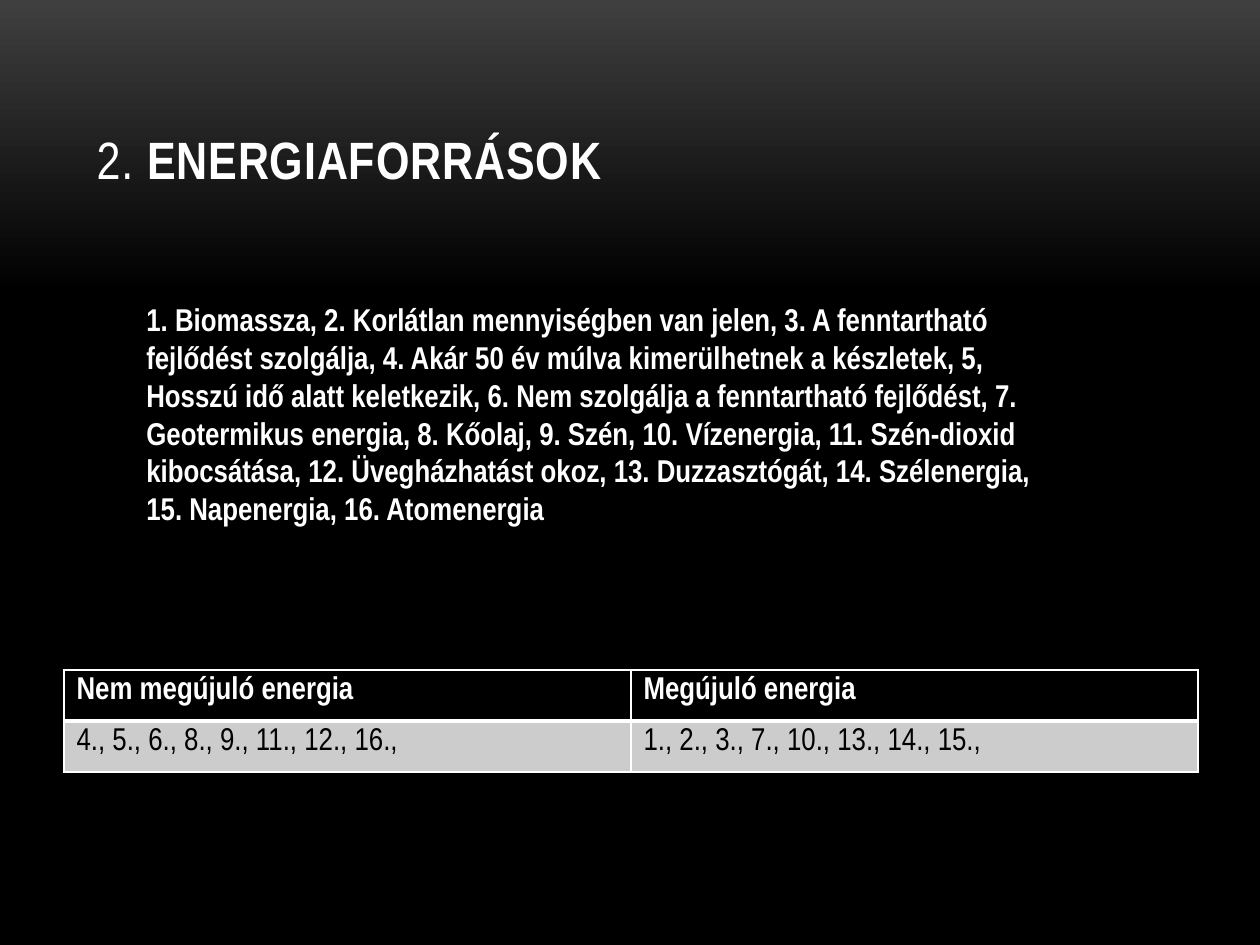
import pptx
import pptx.dml.color
import pptx.enum.text
import pptx.oxml
import pptx.oxml.ns
import pptx.util

# Content
TITLE = [("2. ", False), ("ENERGIAFORRÁSOK", True)]
TERMS = (
    "1. Biomassza, 2. Korlátlan mennyiségben van jelen, 3. A fenntartható "
    "fejlődést szolgálja, 4. Akár 50 év múlva kimerülhetnek a készletek, 5, "
    "Hosszú idő alatt keletkezik, 6. Nem szolgálja a fenntartható fejlődést, 7. "
    "Geotermikus energia, 8. Kőolaj, 9. Szén, 10. Vízenergia, 11. Szén-dioxid "
    "kibocsátása, 12. Üvegházhatást okoz, 13. Duzzasztógát, 14. Szélenergia, "
    "15. Napenergia, 16. Atomenergia"
)
ENERGY_ROWS = [
    ("Nem megújuló energia", "Megújuló energia"),
    ("4., 5., 6., 8., 9., 11., 12., 16.,", "1., 2., 3., 7., 10., 13., 14., 15.,"),
]

# Style and layout, in px
FONT = "Arial Narrow"
COLORS = {"white": "FFFFFF", "black": "000000", "glow": "3F3F3F", "answer": "CCCCCC"}
PX = 914400 / 126
SLIDE_SIZE = (1260, 945)
TITLE_BOX = (84, 38, 1092, 158)
TERMS_BOX = (134, 294, 942, 242)
TABLE_BOX = (64, 670, 1134, 102)


def emu(lengths):
    return [pptx.util.Emu(round(length * PX)) for length in lengths]


def rgb(name):
    return pptx.dml.color.RGBColor.from_string(COLORS[name])


def add_text(paragraph, text, size=18, color="white", bold=False, spacing=None):
    run = paragraph.add_run()
    run.text = text
    run.font.name = FONT
    run.font.size = pptx.util.Pt(size)
    run.font.bold = bold
    run.font.color.rgb = rgb(color)
    if spacing is not None:
        run.font._element.set("spc", str(round(spacing * 100)))


def set_borders(cell, widths):
    """Draw white edges; widths holds points for left, right, top, bottom."""
    properties = cell._tc.get_or_add_tcPr()
    for index, (edge, width) in enumerate(zip(("L", "R", "T", "B"), widths)):
        line = pptx.oxml.parse_xml(
            f'<a:ln{edge} {pptx.oxml.ns.nsdecls("a")} w="{pptx.util.Pt(width)}">'
            f'<a:solidFill><a:srgbClr val="{COLORS["white"]}"/></a:solidFill></a:ln{edge}>'
        )
        properties.insert(index, line)


def main():
    deck = pptx.Presentation()
    deck.slide_width, deck.slide_height = emu(SLIDE_SIZE)
    slide = deck.slides.add_slide(deck.slide_layouts[5])

    # Background fading from grey to black
    backdrop = slide.background.fill
    backdrop.gradient()
    backdrop.gradient_angle = 270
    for stop, (position, color) in zip(backdrop.gradient_stops, [(0, "glow"), (0.31, "black")]):
        stop.position = position
        stop.color.rgb = rgb(color)

    # Title
    title = slide.shapes.title
    title.left, title.top, title.width, title.height = emu(TITLE_BOX)
    title.text_frame.auto_size = pptx.enum.text.MSO_AUTO_SIZE.NONE
    title.text_frame.vertical_anchor = pptx.enum.text.MSO_ANCHOR.BOTTOM
    heading = title.text_frame.paragraphs[0]
    heading.alignment = pptx.enum.text.PP_ALIGN.LEFT
    for text, bold in TITLE:
        add_text(heading, text, size=30, bold=bold, spacing=0.5)

    # Terms to sort
    terms = slide.shapes.add_textbox(*emu(TERMS_BOX)).text_frame
    terms.word_wrap = True
    terms.auto_size = pptx.enum.text.MSO_AUTO_SIZE.SHAPE_TO_FIT_TEXT
    add_text(terms.paragraphs[0], TERMS, bold=True)

    # Energy table
    energy = slide.shapes.add_table(len(ENERGY_ROWS), len(ENERGY_ROWS[0]), *emu(TABLE_BOX)).table
    for row, texts in enumerate(ENERGY_ROWS):
        header = row == 0
        for column, text in enumerate(texts):
            cell = energy.cell(row, column)
            cell.fill.solid()
            cell.fill.fore_color.rgb = rgb("black" if header else "answer")
            set_borders(cell, (1, 1, 1, 3) if header else (1, 1, 3, 1))
            add_text(cell.text_frame.paragraphs[0], text,
                     color="white" if header else "black", bold=header)

    deck.save("out.pptx")


if __name__ == "__main__":
    main()
